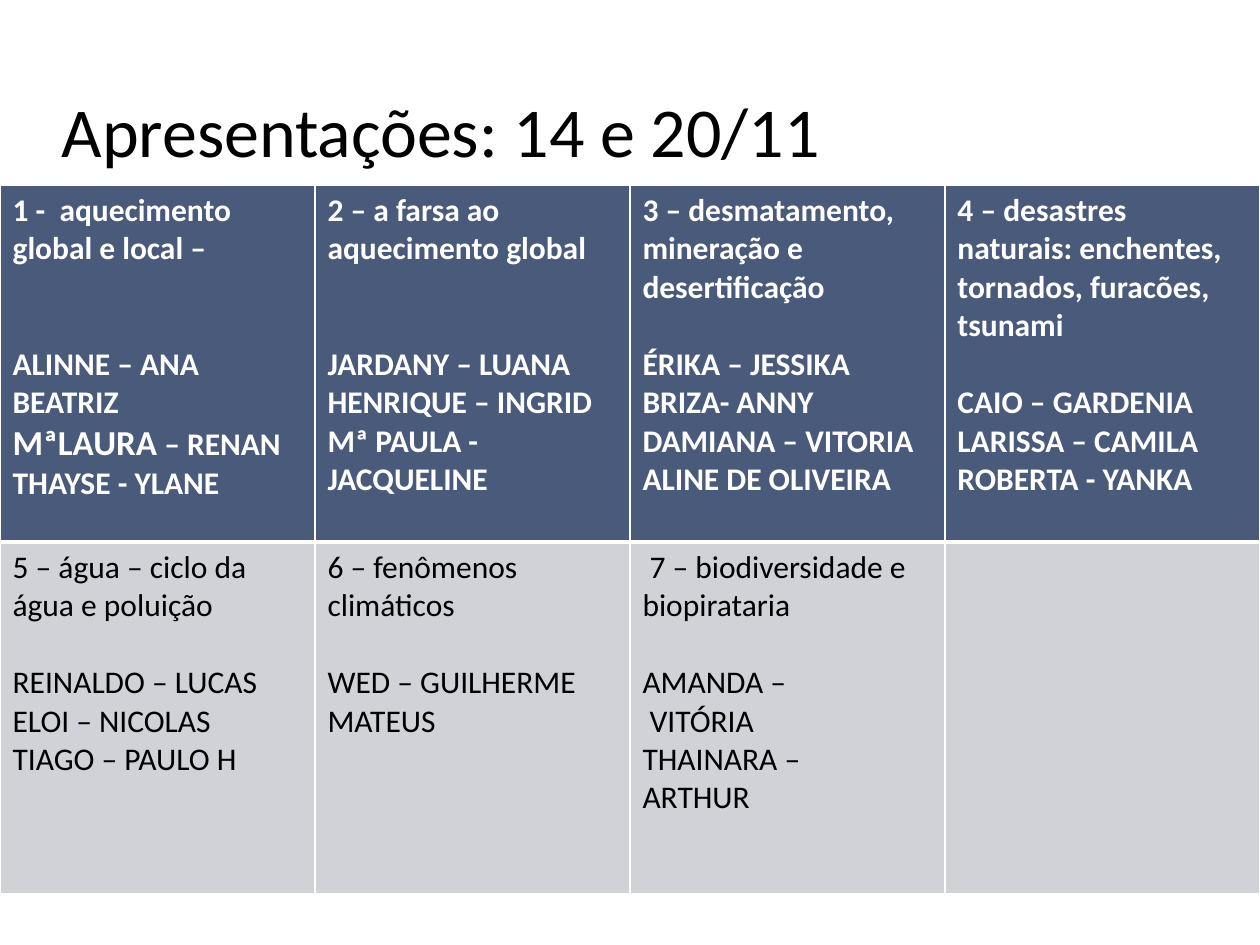
from lxml.etree import SubElement
from pptx import Presentation
from pptx.dml.color import RGBColor
from pptx.enum.text import MSO_ANCHOR, PP_ALIGN
from pptx.oxml.ns import qn
from pptx.util import Emu, Pt

PX = 914400 // 126
FONT = "Calibri"
COLORS = {"header": "4A5A7A", "body": "D0D2D7", "white": "FFFFFF", "black": "000000"}
TEXT_SIZE = 18
LINE_HEIGHT = 22

TITLE = "Apresentações: 14 e 20/11"
# Each group: topic, lines of space below it, students.
# A student line is a string or a list of (text, size) spans.
GROUPS = [
    [
        ("1 -  aquecimento global e local –", 2,
         ["ALINNE – ANA BEATRIZ", [("MªLAURA", 20), (" – RENAN", 18)], "THAYSE - YLANE"]),
        ("2 – a farsa ao aquecimento global", 2,
         ["JARDANY – LUANA", "HENRIQUE – INGRID", "Mª PAULA - JACQUELINE"]),
        ("3 – desmatamento, mineração e desertificação", 1,
         ["ÉRIKA – JESSIKA", "BRIZA- ANNY", "DAMIANA – VITORIA", "ALINE DE OLIVEIRA"]),
        ("4 – desastres naturais: enchentes, tornados, furacões, tsunami", 1,
         ["CAIO – GARDENIA", "LARISSA – CAMILA", "ROBERTA - YANKA"]),
    ],
    [
        ("5 – água – ciclo da água e poluição", 1,
         ["REINALDO – LUCAS", "ELOI – NICOLAS", "TIAGO – PAULO H"]),
        ("6 – fenômenos climáticos", 1, ["WED – GUILHERME", "MATEUS"]),
        (" 7 – biodiversidade e biopirataria", 1,
         ["AMANDA –", " VITÓRIA", "THAINARA –", "ARTHUR"]),
        None,
    ],
]
# Height in px, fill, text colour, bold, top and bottom border in points
ROW_STYLES = [
    (357, "header", "white", True, 1, 3),
    (352, "body", "black", False, 3, 1),
]
TABLE_TOP, TABLE_WIDTH = 185, 1260


def px(length):
    return Emu(length * PX)


def rgb(name):
    return RGBColor.from_string(COLORS[name])


def style_font(font, size, color, bold=False):
    font.name = FONT
    font.size = Pt(size)
    font.bold = bold
    font.color.rgb = rgb(color)


def set_borders(cell, top, bottom):
    properties = cell._tc.get_or_add_tcPr()
    for side, width in (("L", 1), ("R", 1), ("T", top), ("B", bottom)):
        line = SubElement(properties, qn(f"a:ln{side}"), w=str(Pt(width)))
        fill = SubElement(line, qn("a:solidFill"))
        SubElement(fill, qn("a:srgbClr"), val=COLORS["white"])


def write_group(frame, group, color, bold):
    topic, gap_lines, students = group
    for index, line in enumerate([topic, *students]):
        para = frame.paragraphs[0] if index == 0 else frame.add_paragraph()
        if index == 1:
            para.space_before = Pt(gap_lines * LINE_HEIGHT)
        spans = [(line, TEXT_SIZE)] if isinstance(line, str) else line
        for text, size in spans:
            span = para.add_run()
            span.text = text
            style_font(span.font, size, color, bold)


def add_title(page):
    title = page.shapes.title
    title.left, title.top, title.width, title.height = map(px, (49, 31, 1058, 147))
    frame = title.text_frame
    frame.text = TITLE
    frame.vertical_anchor = MSO_ANCHOR.BOTTOM
    para = frame.paragraphs[0]
    para.alignment = PP_ALIGN.LEFT
    style_font(para.runs[0].font, 40, "black")


def add_groups_table(page):
    height = sum(style[0] for style in ROW_STYLES)
    table = page.shapes.add_table(
        len(GROUPS), len(GROUPS[0]), 0, px(TABLE_TOP), px(TABLE_WIDTH), px(height)
    ).table
    for row_index, (groups, style) in enumerate(zip(GROUPS, ROW_STYLES)):
        row_height, fill, color, bold, top, bottom = style
        table.rows[row_index].height = px(row_height)
        for column_index, group in enumerate(groups):
            cell = table.cell(row_index, column_index)
            set_borders(cell, top, bottom)
            cell.fill.solid()
            cell.fill.fore_color.rgb = rgb(fill)
            if group:
                write_group(cell.text_frame, group, color, bold)


def main():
    deck = Presentation()
    deck.slide_width, deck.slide_height = px(1260), px(945)
    page = deck.slides.add_slide(deck.slide_layouts[5])
    add_groups_table(page)
    add_title(page)
    deck.save("out.pptx")


if __name__ == "__main__":
    main()
